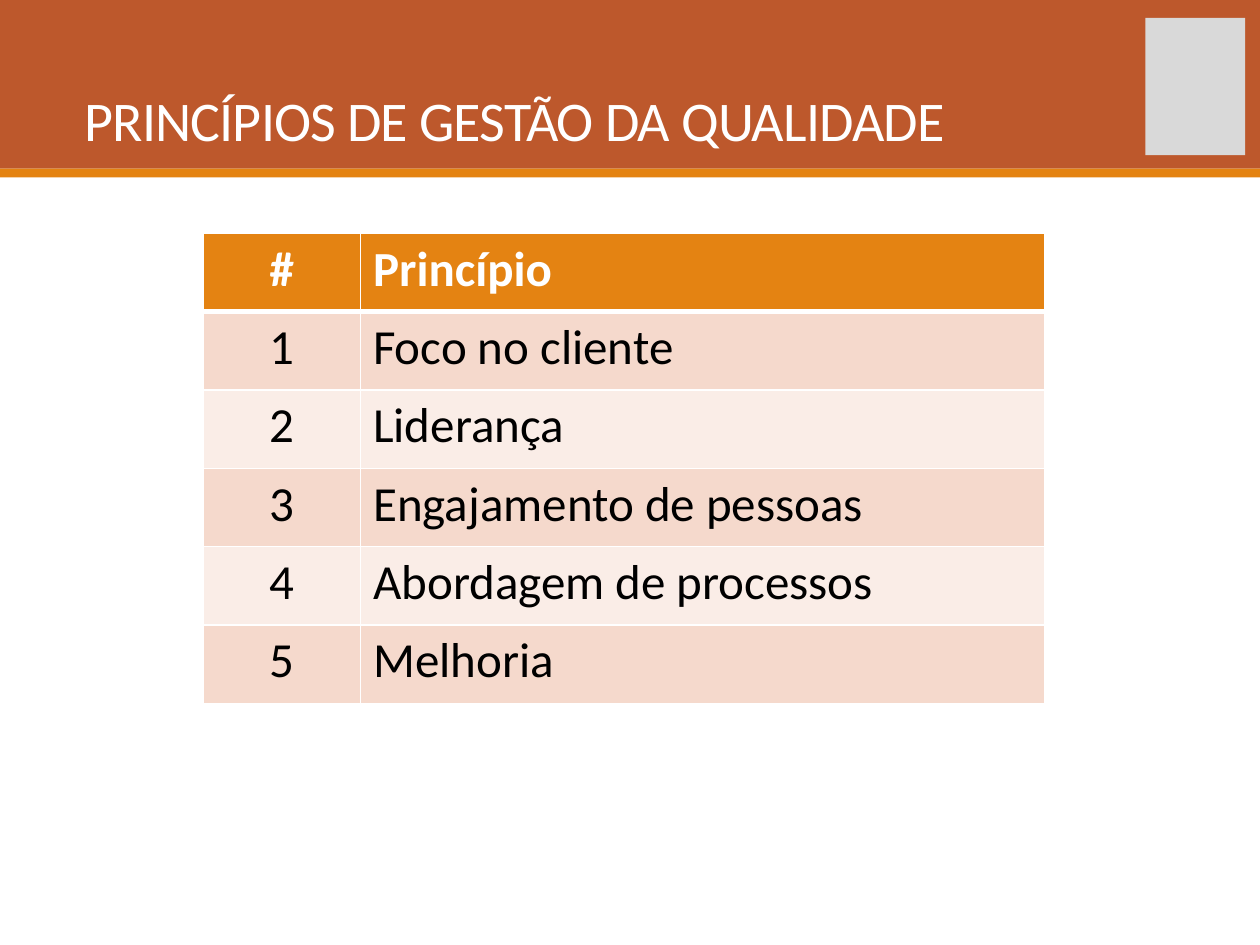
from lxml import etree
from pptx import Presentation
from pptx.dml.color import RGBColor
from pptx.enum import shapes, text
from pptx.oxml.ns import qn
from pptx.util import Cm, Pt

RUST = RGBColor(0xBD, 0x58, 0x2C)
AMBER = RGBColor(0xE4, 0x83, 0x12)
GRAY = RGBColor(0xD9, 0xD9, 0xD9)
ROSE = RGBColor(0xF5, 0xD9, 0xCC)
PALE = RGBColor(0xFA, 0xED, 0xE7)
WHITE = RGBColor(255, 255, 255)
BLACK = RGBColor(0, 0, 0)

TITLE = "PRINCÍPIOS DE GESTÃO DA QUALIDADE"
HEAD = "Princípio"
ITEMS = [
    "Foco no cliente",
    "Liderança",
    "Engajamento de pessoas",
    "Abordagem de processos",
    "Melhoria",
]
BARS = [
    (0, 0, 25.4, 3.4, RUST),
    (0, 3.4, 25.4, 0.18, AMBER),
    (23.09, 0.36, 2.01, 2.77, GRAY),
]
COLS = (3.18, 13.79)
ROW = 1.58


def apply(obj, **vals):
    for key, val in vals.items():
        setattr(obj, key, val)


def paint(font, size, color, bold=False):
    apply(font, name="Calibri", size=Pt(size), bold=bold)
    font.color.rgb = color


def edge(cell, low):
    props = cell._tc.get_or_add_tcPr()
    for spot, (side, wide) in enumerate(zip("LRTB", (1, 1, 1, low))):
        line = etree.Element(qn(f"a:ln{side}"), w=str(Pt(wide)))
        fill = etree.SubElement(line, qn("a:solidFill"))
        etree.SubElement(fill, qn("a:srgbClr"), val=str(WHITE))
        props.insert(spot, line)


def add_bars(slide):
    for *box, color in BARS:
        bar = slide.shapes.add_shape(shapes.MSO_SHAPE.RECTANGLE, *map(Cm, box))
        bar.shadow.inherit = False
        bar.fill.solid()
        bar.fill.fore_color.rgb = color
        bar.line.fill.background()


def set_title(slide):
    title = slide.shapes.title
    slide.shapes._spTree.append(title._element)
    apply(title, left=Cm(1.45), top=Cm(0.84), width=Cm(21.62), height=Cm(2.24))
    frame = title.text_frame
    frame.text = TITLE
    apply(frame, word_wrap=True, auto_size=text.MSO_AUTO_SIZE.NONE,
          vertical_anchor=text.MSO_ANCHOR.BOTTOM,
          margin_top=0, margin_bottom=0)
    para = frame.paragraphs[0]
    apply(para, alignment=text.PP_ALIGN.LEFT, line_spacing=0.85)
    run = para.runs[0]
    paint(run.font, 32, WHITE)
    run._r.get_or_add_rPr().set("spc", "-50")


def add_grid(slide):
    rows = [("#", HEAD)] + [(str(n), item) for n, item in enumerate(ITEMS, 1)]
    grid = slide.shapes.add_table(
        len(rows), len(COLS), Cm(4.09), Cm(4.7),
        Cm(sum(COLS)), Cm(ROW * len(rows))).table
    for col, wide in zip(grid.columns, COLS):
        col.width = Cm(wide)
    for r, words in enumerate(rows):
        grid.rows[r].height = Cm(ROW)
        top = r == 0
        shade = AMBER if top else (PALE, ROSE)[r % 2]
        for c, word in enumerate(words):
            cell = grid.cell(r, c)
            cell.text = word
            cell.fill.solid()
            cell.fill.fore_color.rgb = shade
            edge(cell, 3 if top else 1)
            para = cell.text_frame.paragraphs[0]
            para.alignment = (text.PP_ALIGN.CENTER, text.PP_ALIGN.LEFT)[c]
            paint(para.runs[0].font, 28, WHITE if top else BLACK, top)


def main():
    deck = Presentation()
    apply(deck, slide_width=Cm(25.4), slide_height=Cm(19.05))
    slide = deck.slides.add_slide(deck.slide_layouts[5])
    add_bars(slide)
    add_grid(slide)
    set_title(slide)
    deck.save("out.pptx")


if __name__ == "__main__":
    main()
